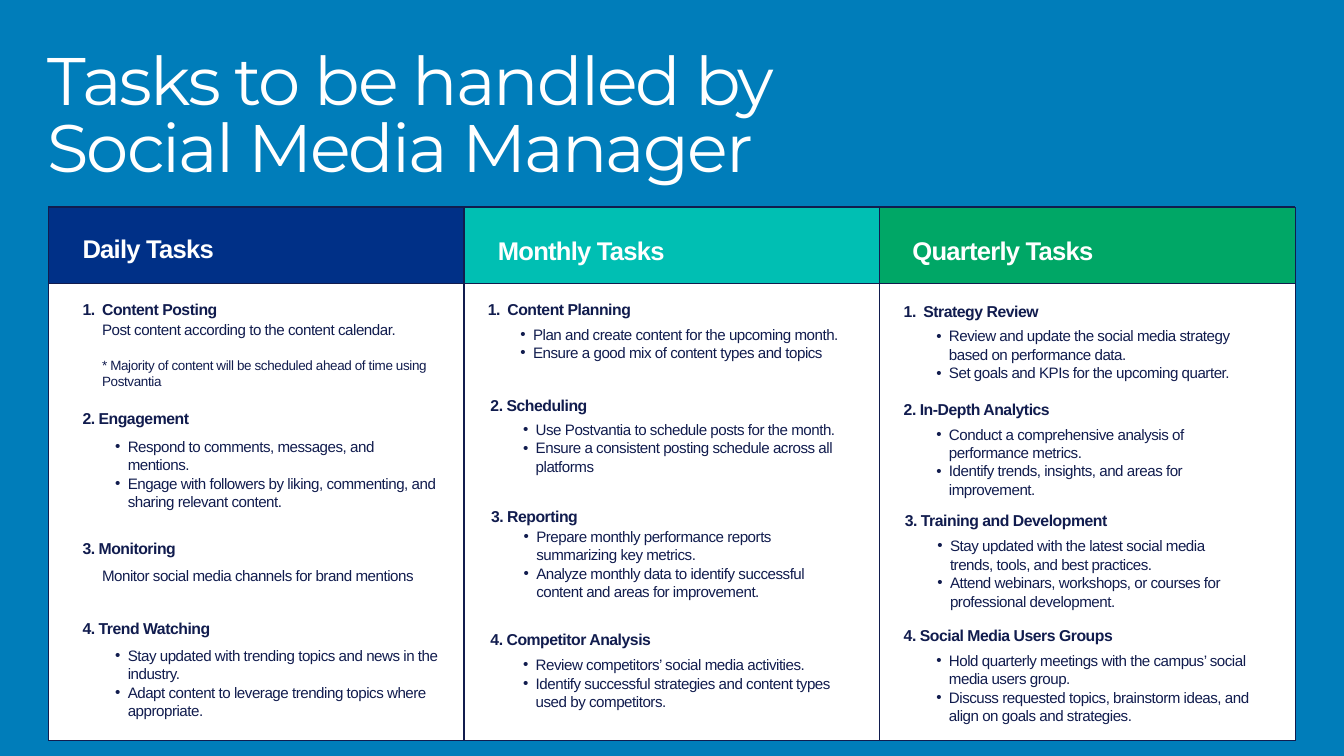
from dataclasses import dataclass

from lxml import etree
from pptx import Presentation
from pptx.dml.color import RGBColor
from pptx.enum.shapes import MSO_CONNECTOR, MSO_SHAPE
from pptx.enum.text import MSO_ANCHOR, MSO_AUTO_SIZE, PP_ALIGN
from pptx.oxml.ns import qn
from pptx.util import Cm, Pt

RECTANGLE = MSO_SHAPE.RECTANGLE
STRAIGHT = MSO_CONNECTOR.STRAIGHT
GROW = MSO_AUTO_SIZE.SHAPE_TO_FIT_TEXT
TOP_ANCHOR = MSO_ANCHOR.TOP
ALIGN_LEFT = PP_ALIGN.LEFT

# Board geometry in centimetres
LEFT, TOP, HEADER_BOTTOM, BOTTOM = 1.83, 7.83, 10.72, 28
COLUMN_WIDTH = 15.71
RIGHT = LEFT + 3 * COLUMN_WIDTH
HEADING_WIDTH, HEADING_HEIGHT = 11.61, 0.71
BODY_INDENT = 0.74
WIDE, NARROW = 12.73, 12.12
BULLET_INDENT, BULLET_HANG = 0.97, 0.48


@dataclass(frozen=True)
class TextStyle:
    size: float
    leading: float
    tracking: float
    color: str
    font: str = "Arial"
    bold: bool = False


@dataclass(frozen=True)
class Theme:
    background: str = "007DBA"
    panel: str = "FFFFFF"
    ink: str = "111C4E"
    daily: str = "003087"
    monthly: str = "00BFB3"
    quarterly: str = "00A766"
    rule_width: float = 1.5
    title: TextStyle = TextStyle(72, 72, -2.1, "FFFFFF", font="Montserrat")
    header: TextStyle = TextStyle(27.4, 27.4, -0.8, "FFFFFF", bold=True)
    heading: TextStyle = TextStyle(16.9, 20.7, -0.5, "111C4E", bold=True)
    body: TextStyle = TextStyle(16.2, 19.8, -0.5, "111C4E")
    note: TextStyle = TextStyle(14.4, 17.6, -0.4, "111C4E")


THEME = Theme()


@dataclass(frozen=True)
class Section:
    heading: str
    left: float
    top: float
    body_top: float
    lines: tuple
    width: float = WIDE
    height: float = 2.79
    bulleted: bool = True


@dataclass(frozen=True)
class Column:
    name: str
    color: str
    name_box: tuple
    sections: tuple


COLUMNS = (
    Column("Daily Tasks", THEME.daily, (3.12, 8.99, 5.77, 0.97), (
        Section("1.\tContent Posting", 3.12, 11.3, 12.09,
                ("Post content according to the content calendar.",),
                height=0.66, bulleted=False),
        Section("2. Engagement", 3.12, 15.44, 16.51,
                ("Respond to comments, messages, and mentions.",
                 "Engage with followers by liking, commenting, and sharing relevant content."),
                height=3.48),
        Section("3. Monitoring", 3.12, 20.37, 21.39,
                ("Monitor social media channels for brand mentions",),
                width=NARROW, height=1.35, bulleted=False),
        Section("4. Trend Watching", 3.12, 23.37, 24.41,
                ("Stay updated with trending topics and news in the industry.",
                 "Adapt content to leverage trending topics where appropriate.")),
    )),
    Column("Monthly Tasks", THEME.monthly, (18.82, 9.07, 7.24, 0.97), (
        Section("1.\tContent Planning", 18.44, 11.3, 12.27,
                ("Plan and create content for the upcoming month.",
                 "Ensure a good mix of content types and topics"), height=1.37),
        Section("2. Scheduling", 18.54, 14.94, 15.88,
                ("Use Postvantia to schedule posts for the month.",
                 "Ensure a consistent posting schedule across all platforms"), height=2.08),
        Section("3. Reporting", 18.56, 19.15, 19.91,
                ("Prepare monthly performance reports summarizing key metrics.",
                 "Analyze monthly data to identify successful content and areas for improvement."),
                width=NARROW),
        Section("4. Competitor Analysis", 18.54, 23.8, 24.77,
                ("Review competitors’ social media activities.",
                 "Identify successful strategies and content types used by competitors."),
                height=2.08),
    )),
    Column("Quarterly Tasks", THEME.quarterly, (34.49, 9.07, 8.2, 0.97), (
        Section("1.\tStrategy Review", 34.16, 11.38, 12.34,
                ("Review and update the social media strategy based on performance data.",
                 "Set goals and KPIs for the upcoming quarter."), height=2.08),
        Section("2. In-Depth Analytics", 34.16, 15.09, 16.05,
                ("Conduct a comprehensive analysis of performance metrics.",
                 "Identify trends, insights, and areas for improvement.")),
        Section("3. Training and Development", 34.2, 19.3, 20.27,
                ("Stay updated with the latest social media trends, tools, and best practices.",
                 "Attend webinars, workshops, or courses for professional development."),
                width=NARROW),
        Section("4. Social Media Users Groups", 34.16, 23.65, 24.61,
                ("Hold quarterly meetings with the campus’ social media users group.",
                 "Discuss requested topics, brainstorm ideas, and align on goals and strategies.")),
    )),
)


def set_indent(para, margin, hang):
    properties = para._p.get_or_add_pPr()
    properties.set("marL", str(Cm(margin)))
    properties.set("indent", str(-Cm(hang)))
    return properties


def add_bullet(para):
    para.level = 1
    properties = set_indent(para, BULLET_INDENT, BULLET_HANG)
    etree.SubElement(properties, qn("a:buFont")).set("typeface", "Arial")
    etree.SubElement(properties, qn("a:buChar")).set("char", "•")


def add_text(page, at, *lines, style, bulleted=False, hang=0):
    """Add a text box with one paragraph per line; at is left, top, width, height."""
    box = page.shapes.add_textbox(*map(Cm, at))
    frame = box.text_frame
    frame.word_wrap = True
    frame.auto_size = GROW
    frame.vertical_anchor = TOP_ANCHOR
    frame.margin_left = frame.margin_top = frame.margin_right = frame.margin_bottom = 0
    for index, line in enumerate(lines):
        para = frame.add_paragraph() if index else frame.paragraphs[0]
        para.alignment = ALIGN_LEFT
        para.line_spacing = Pt(style.leading)
        if bulleted:
            add_bullet(para)
        elif hang:
            set_indent(para, hang, hang)
        span = para.add_run()
        span.text = line
        span.font.name = style.font
        span.font.size = Pt(style.size)
        span.font.bold = style.bold
        span.font.color.rgb = RGBColor.from_string(style.color)
        span._r.get_or_add_rPr().set("spc", str(round(style.tracking * 100)))


def add_panel(page, left, top, right, bottom, color):
    panel = page.shapes.add_shape(
        RECTANGLE, Cm(left), Cm(top), Cm(right - left), Cm(bottom - top))
    panel.shadow.inherit = False
    panel.fill.solid()
    panel.fill.fore_color.rgb = RGBColor.from_string(color)
    panel.line.fill.background()


def add_rule(page, *ends):
    rule = page.shapes.add_connector(STRAIGHT, *map(Cm, ends))
    rule.line.color.rgb = RGBColor.from_string(THEME.ink)
    rule.line.width = Pt(THEME.rule_width)
    etree.SubElement(rule._element.spPr, qn("a:effectLst"))


def add_board(page):
    """Add the white body, the coloured headers and the grid rules."""
    add_panel(page, LEFT, HEADER_BOTTOM, RIGHT, BOTTOM, THEME.panel)
    edges = [LEFT + index * COLUMN_WIDTH for index in range(len(COLUMNS) + 1)]
    for column, left, right in zip(COLUMNS, edges, edges[1:]):
        add_panel(page, left, TOP, right, HEADER_BOTTOM, column.color)
    for edge in edges:
        add_rule(page, edge, TOP, edge, BOTTOM)
    for height in (TOP, HEADER_BOTTOM, BOTTOM):
        add_rule(page, LEFT, height, RIGHT, height)


def add_section(page, section):
    add_text(page, (section.left, section.top, HEADING_WIDTH, HEADING_HEIGHT),
             section.heading, style=THEME.heading, hang=BODY_INDENT)
    add_text(page, (section.left + BODY_INDENT, section.body_top, section.width, section.height),
             *section.lines, style=THEME.body, bulleted=section.bulleted)


def main():
    deck = Presentation()
    deck.slide_width, deck.slide_height = Cm(50.8), Cm(28.58)
    page = deck.slides.add_slide(deck.slide_layouts[6])
    page.background.fill.solid()
    page.background.fill.fore_color.rgb = RGBColor.from_string(THEME.background)
    add_text(page, (1.8, 1.96, 34.47, 5.13),
             "Tasks to be handled by Social Media Manager", style=THEME.title)
    add_board(page)
    for column in COLUMNS:
        add_text(page, column.name_box, column.name, style=THEME.header)
        for section in column.sections:
            add_section(page, section)
    add_text(page, (3.86, 13.49, WIDE, 1.24),
             "* Majority of content will be scheduled ahead of time using Postvantia",
             style=THEME.note)
    deck.save("out.pptx")


if __name__ == "__main__":
    main()
